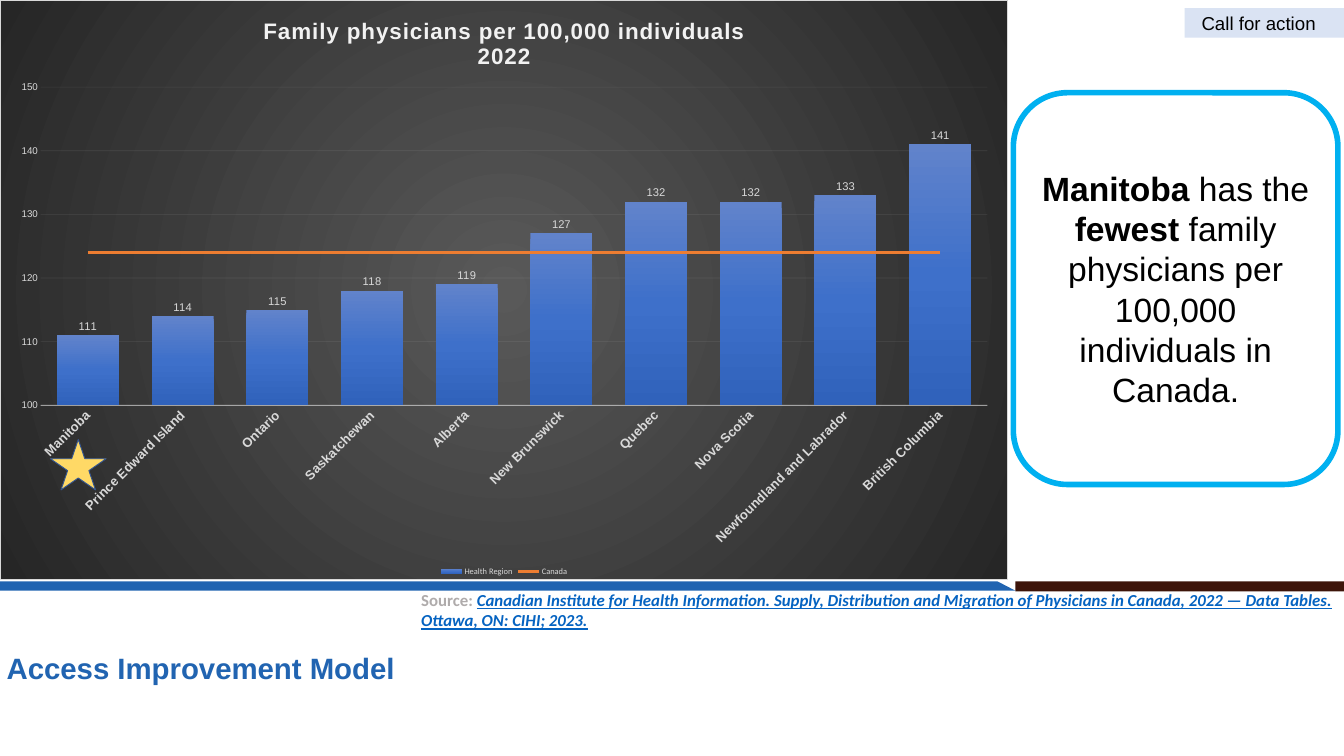
from lxml.etree import SubElement
from pptx import Presentation
from pptx.chart.data import CategoryChartData
from pptx.dml.color import RGBColor
from pptx.enum.chart import (XL_CHART_TYPE, XL_LABEL_POSITION, XL_LEGEND_POSITION,
                             XL_MARKER_STYLE, XL_TICK_MARK)
from pptx.enum.shapes import MSO_SHAPE
from pptx.enum.text import MSO_ANCHOR, PP_ALIGN
from pptx.oxml import parse_xml
from pptx.oxml.ns import nsdecls, qn
from pptx.util import Inches, Pt

BLACK = RGBColor(0x00, 0x00, 0x00)
BLUE = RGBColor(0x21, 0x64, 0xB1)
BROWN = RGBColor(0x3D, 0x14, 0x09)
SKY = RGBColor(0x00, 0xB0, 0xF0)
PALE_BLUE = RGBColor(0xDA, 0xE3, 0xF3)
GOLD = RGBColor(0xFF, 0xD9, 0x66)
NAVY = RGBColor(0x32, 0x54, 0x91)
ORANGE = RGBColor(0xED, 0x7D, 0x31)
LINK = RGBColor(0x05, 0x63, 0xC1)
GRAY = RGBColor(0xAF, 0xAB, 0xAB)
LIGHT = RGBColor(0xD9, 0xD9, 0xD9)
OFF_WHITE = RGBColor(0xF2, 0xF2, 0xF2)

PHYSICIANS = {
    "Manitoba": 111, "Prince Edward Island": 114, "Ontario": 115,
    "Saskatchewan": 118, "Alberta": 119, "New Brunswick": 127, "Quebec": 132,
    "Nova Scotia": 132, "Newfoundland and Labrador": 133, "British Columbia": 141,
}
CANADA = 124
BACKDROP = [(0, "595959"), (100, "262626")]
BAR_SHADES = [(0, "6183CB"), (50, "3E70CA"), (100, "3062BB")]
RADIAL = ('<a:path path="circle"><a:fillToRect l="50000" t="50000" '
          'r="50000" b="50000"/></a:path>')
DOWNWARD = '<a:lin ang="5400000" scaled="0"/>'


def set_font(font, color=None, **values):
    for name, value in values.items():
        setattr(font, name, value)
    if color is not None:
        font.color.rgb = color


def set_line(line, color, width, opacity=100):
    line.color.rgb = color
    line.width = Pt(width)
    if opacity < 100:
        clr = line.fill._xPr.find(".//" + qn("a:srgbClr"))
        SubElement(clr, qn("a:alpha"), val=str(opacity * 1000))


def set_gradient(sp_pr, stops, direction):
    """Put a gradient fill first in an empty spPr."""
    gs = "".join(f'<a:gs pos="{pos * 1000}"><a:srgbClr val="{color}"/></a:gs>'
                 for pos, color in stops)
    sp_pr.insert(0, parse_xml(f'<a:gradFill {nsdecls("a")} rotWithShape="1">'
                              f"<a:gsLst>{gs}</a:gsLst>{direction}</a:gradFill>"))


def move_to_line_chart(chart, index):
    """Draw one series of a column chart as a line on the same axes."""
    bar = chart._chartSpace.find(".//" + qn("c:barChart"))
    ser = bar.findall(qn("c:ser"))[index]
    line = parse_xml(f'<c:lineChart {nsdecls("c")}><c:grouping val="standard"/>'
                     '<c:varyColors val="0"/><c:marker val="1"/></c:lineChart>')
    invert = ser.find(qn("c:invertIfNegative"))
    if invert is not None:
        ser.remove(invert)
    line.insert(2, ser)
    for axis in bar.findall(qn("c:axId")):
        SubElement(line, qn("c:axId"), val=axis.get("val"))
    bar.addnext(line)


def set_plot_area(chart, **fractions):
    plot_area = chart._chartSpace.find(".//" + qn("c:plotArea"))
    for old in plot_area.findall(qn("c:layout")):
        plot_area.remove(old)
    modes = '<c:xMode val="edge"/><c:yMode val="edge"/>'
    sizes = "".join(f'<c:{k} val="{v}"/>' for k, v in fractions.items())
    plot_area.insert(0, parse_xml(
        f'<c:layout {nsdecls("c")}><c:manualLayout><c:layoutTarget val="inner"/>'
        f"{modes}{sizes}</c:manualLayout></c:layout>"))


class SlideBuilder:
    """Holds the slide and its font, and adds each kind of element."""

    def __init__(self, slide, font="Arial"):
        self.s = slide
        self.font = font

    def fill_text(self, tf, paragraphs, align=PP_ALIGN.LEFT, **style):
        """Fill a frame; a paragraph is a list of (text, own format) runs."""
        tf.word_wrap = True
        for i, runs in enumerate(paragraphs):
            p = tf.paragraphs[0] if i == 0 else tf.add_paragraph()
            p.alignment = align
            for text, own in runs:
                r = p.add_run()
                r.text = text
                set_font(r.font, **{"name": self.font, **style, **own})

    def text(self, box, paragraphs, **style):
        tb = self.s.shapes.add_textbox(*map(Inches, box))
        self.fill_text(tb.text_frame, paragraphs, **style)

    def finish(self, sp, fill, line=None, width=1):
        sp.shadow.inherit = False
        if fill is None:
            sp.fill.background()
        else:
            sp.fill.solid()
            sp.fill.fore_color.rgb = fill
        if line is None:
            sp.line.fill.background()
        else:
            set_line(sp.line, line, width)
        return sp

    def shape(self, kind, box, fill=None, line=None, width=1):
        sp = self.s.shapes.add_shape(kind, *map(Inches, box))
        return self.finish(sp, fill, line, width)

    def polygon(self, points, fill):
        pts = [(Inches(x), Inches(y)) for x, y in points]
        fb = self.s.shapes.build_freeform(*pts[0])
        fb.add_line_segments(pts[1:], close=True)
        return self.finish(fb.convert_to_shape(), fill)

    def chart(self, box, title):
        data = CategoryChartData(number_format="0")
        data.categories = list(PHYSICIANS)
        data.add_series("Health Region", list(PHYSICIANS.values()))
        data.add_series("Canada", [CANADA] * len(PHYSICIANS))
        chart = self.s.shapes.add_chart(
            XL_CHART_TYPE.COLUMN_CLUSTERED, *map(Inches, box), data).chart
        set_font(chart.font, BLACK, name="Calibri", size=Pt(10))
        self.chart_title(chart, title)
        self.chart_axes(chart)
        self.chart_series(chart)
        chart.has_legend = True
        chart.legend.position = XL_LEGEND_POSITION.BOTTOM
        chart.legend.include_in_layout = False
        set_font(chart.legend.font, LIGHT, name="Calibri", size=Pt(9))
        set_plot_area(chart, x=0.04, y=0.15, w=0.94, h=0.55)
        frame = parse_xml(f'<c:spPr {nsdecls("c", "a")}><a:ln w="9525"><a:solidFill>'
                          f'<a:srgbClr val="{LIGHT}"/></a:solidFill></a:ln></c:spPr>')
        set_gradient(frame, BACKDROP, RADIAL)
        chart._chartSpace.find(qn("c:chart")).addnext(frame)

    def chart_title(self, chart, title):
        tf = chart.chart_title.text_frame
        tf.text = title
        for p in tf.paragraphs:
            for r in p.runs:
                set_font(r.font, OFF_WHITE, name=self.font, size=Pt(24), bold=True)
                r.font._element.set("spc", "100")

    def chart_axes(self, chart):
        cat, val = chart.category_axis, chart.value_axis
        for axis, size, bold in ((cat, 14, True), (val, 10.5, False)):
            axis.major_tick_mark = axis.minor_tick_mark = XL_TICK_MARK.NONE
            set_font(axis.tick_labels.font, LIGHT, name=self.font,
                     size=Pt(size), bold=bold)
        cat._element.find(".//" + qn("a:bodyPr")).set("rot", "-2700000")
        set_line(cat.format.line, OFF_WHITE, 1, opacity=54)
        limits = {"minimum_scale": 100, "maximum_scale": 150, "major_unit": 10}
        for name, value in limits.items():
            setattr(val, name, value)
        val.tick_labels.number_format = "0"
        val.tick_labels.number_format_is_linked = False
        val.format.line.fill.background()
        set_line(val.major_gridlines.format.line, OFF_WHITE, 0.75, opacity=10)

    def chart_series(self, chart):
        plot = chart.plots[0]
        plot.gap_width, plot.overlap, plot.vary_by_categories = 53, 2, False
        bars = plot.series[0]
        set_gradient(bars._element.get_or_add_spPr(), BAR_SHADES, DOWNWARD)
        labels = bars.data_labels
        labels.show_value = True
        labels.position = XL_LABEL_POSITION.OUTSIDE_END
        set_font(labels.font, LIGHT, name=self.font, size=Pt(12))
        move_to_line_chart(chart, 1)
        average = chart.plots[1].series[0]
        average.smooth = False
        average.marker.style = XL_MARKER_STYLE.NONE
        set_line(average.format.line, ORANGE, 2.75)


def main():
    prs = Presentation()
    prs.slide_width, prs.slide_height = Inches(20), Inches(11.25)
    b = SlideBuilder(prs.slides.add_slide(prs.slide_layouts[6]))

    b.shape(MSO_SHAPE.RECTANGLE, (15.11, 8.65, 4.89, 0.15), BROWN)
    b.text((0, 9.62, 8.36, 0.63), [[("Access Improvement Model", {})]],
           size=Pt(31.5), color=BLUE, bold=True)
    b.polygon([(-0.07, 8.79), (15.11, 8.79), (14.84, 8.65), (-0.07, 8.65)], BLUE)

    b.chart((0, 0, 15, 8.62), "Family physicians per 100,000 individuals\n2022")
    b.shape(MSO_SHAPE.STAR_5_POINT, (0.75, 6.54, 0.83, 0.75), GOLD, NAVY)

    message = b.shape(MSO_SHAPE.ROUNDED_RECTANGLE, (15.08, 1.38, 4.83, 5.83),
                      line=SKY, width=6).text_frame
    message.vertical_anchor = MSO_ANCHOR.MIDDLE
    strong = {"bold": True}
    b.fill_text(message, [
        [("Manitoba ", strong), ("has the ", {}), ("fewest", strong), (" family", {})],
        [("physicians per 100,000 individuals in Canada.", {})],
    ], align=PP_ALIGN.CENTER, size=Pt(36), color=BLACK)

    b.text((6.17, 8.73, 14.08, 0.71), [[
        ("Source: ", {"color": GRAY}),
        ("Canadian Institute for Health Information. Supply, Distribution and "
         "Migration of Physicians in Canada, 2022 — Data Tables. Ottawa, ON: "
         "CIHI; 2023.", {"color": LINK, "italic": True, "underline": True}),
    ]], name="Calibri", size=Pt(18), bold=True)

    tag = b.shape(MSO_SHAPE.RECTANGLE, (17.63, 0.12, 2.37, 0.44), PALE_BLUE).text_frame
    tag.margin_left = Inches(0.25)
    b.fill_text(tag, [[("Call for action", {})]], size=Pt(20), color=BLACK)

    prs.save("out.pptx")


if __name__ == "__main__":
    main()
